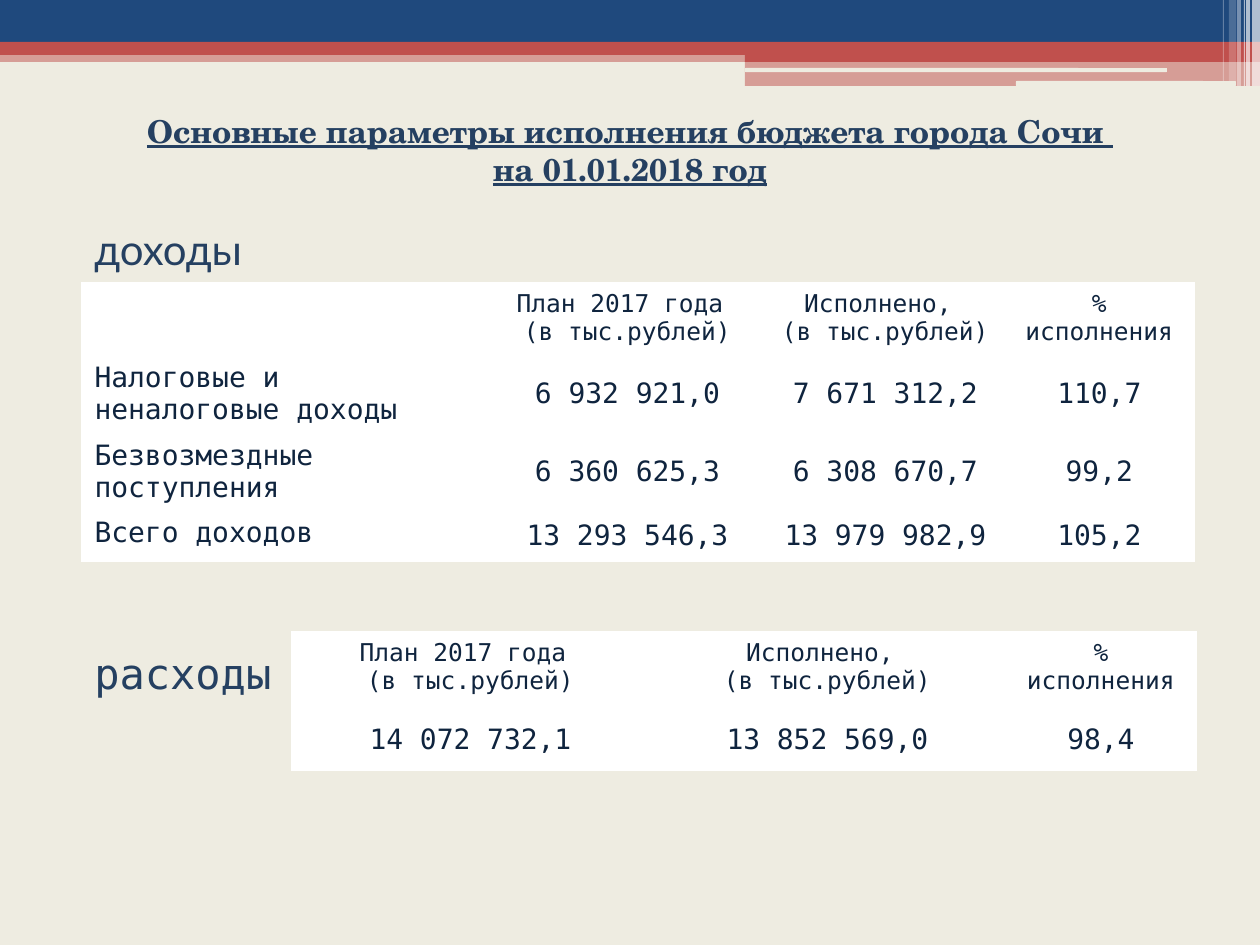
from pptx import Presentation
from pptx.dml.color import RGBColor
from pptx.enum.shapes import MSO_SHAPE as SHAPE
from pptx.enum.text import MSO_ANCHOR as ANCHOR, PP_ALIGN as ALIGN
from pptx.oxml.ns import qn
from pptx.util import Pt
from lxml.etree import SubElement

PX = 914400 / 126
MONO = "DejaVu Sans Mono"
NAVY, RED, CREAM, WHITE = "1F497D", "C0504D", "EEECE1", "FFFFFF"
HEADING, BODY = "254061", "0F243E"


def paint(fill, color, alpha=100):
    fill.solid()
    fill.fore_color.rgb = RGBColor.from_string(color)
    if alpha < 100:
        srgb = fill._xPr.find(qn("a:solidFill")).find(qn("a:srgbClr"))
        SubElement(srgb, qn("a:alpha"), val=str(alpha * 1000))


def write(frame, lines, size, font, color, align=ALIGN.LEFT, strong=False):
    frame.word_wrap = True
    for i, line in enumerate(lines):
        paragraph = frame.add_paragraph() if i else frame.paragraphs[0]
        paragraph.alignment = align
        run = paragraph.add_run()
        run.text = line
        run.font.size = Pt(size)
        run.font.name = font
        run.font.color.rgb = RGBColor.from_string(color)
        if strong:
            run.font.bold = run.font.underline = True


presentation = Presentation()
presentation.slide_width = round(1260 * PX)
presentation.slide_height = round(945 * PX)
slide = presentation.slides.add_slide(presentation.slide_layouts[6])
paint(slide.background.fill, CREAM)

bands = [
    (SHAPE.RECTANGLE, 0, 50, 1260, 12, RED, 50),
    (SHAPE.RECTANGLE, 0, 0, 1260, 42, NAVY, 100),
    (SHAPE.RECTANGLE, 0, 42, 1260, 13, RED, 100),
    (SHAPE.RECTANGLE, 745, 49, 515, 13, RED, 100),
    (SHAPE.RECTANGLE, 745, 61, 515, 25, RED, 50),
    (SHAPE.ROUNDED_RECTANGLE, 745, 68, 422, 4, CREAM, 100),
    (SHAPE.ROUNDED_RECTANGLE, 1016, 81, 220, 5, CREAM, 100),
]
stripes = [(1252, 8, 86, 65), (1246, 4, 86, 65), (1244, 1, 86, 60),
           (1237, 4, 86, 40), (1229, 7, 81, 20), (1223, 1, 81, 30)]
bands += [(SHAPE.RECTANGLE, left, 0, width, height, WHITE, alpha)
          for left, width, height, alpha in stripes]

for kind, left, top, width, height, color, alpha in bands:
    box = [round(n * PX) for n in (left, top, width, height)]
    shape = slide.shapes.add_shape(kind, *box)
    shape.shadow.inherit = False
    shape.line.fill.background()
    paint(shape.fill, color, alpha)

header = [["План 2017 года ", "(в тыс.рублей)"],
          ["Исполнено, ", "(в тыс.рублей)"], ["% исполнения"]]
income_rows = [
    [[]] + header,
    [["Налоговые и неналоговые доходы"], ["6 932 921,0"], ["7 671 312,2"], ["110,7"]],
    [["Безвозмездные поступления"], ["6 360 625,3"], ["6 308 670,7"], ["99,2"]],
    [["Всего доходов"], ["13 293 546,3"], ["13 979 982,9"], ["105,2"]],
]
expense_rows = [header, [["14 072 732,1"], ["13 852 569,0"], ["98,4"]]]
tables = [
    (82, 283, [407, 277, 239, 189], [72, 78, 77, 51], income_rows, True),
    (292, 632, [357, 357, 190], [78, 60], expense_rows, False),
]

for left, top, widths, heights, rows, has_labels in tables:
    box = [round(n * PX) for n in (left, top, sum(widths), sum(heights))]
    table = slide.shapes.add_table(len(rows), len(widths), *box).table
    for column, width in zip(table.columns, widths):
        column.width = round(width * PX)
    for r, (height, row) in enumerate(zip(heights, rows)):
        table.rows[r].height = round(height * PX)
        for c, lines in enumerate(row):
            cell = table.cell(r, c)
            paint(cell.fill, WHITE)
            is_label = has_labels and c == 0
            if r and not is_label:
                cell.vertical_anchor = ANCHOR.MIDDLE
            align = ALIGN.LEFT if is_label else ALIGN.CENTER
            write(cell.text_frame, lines, 16 if r else 14, MONO, BODY, align)

title = ["Основные параметры исполнения бюджета города Сочи ", "на 01.01.2018 год"]
captions = [
    (82, 217, 277, 63, ["доходы"], 24, "Lato", ALIGN.LEFT, False),
    (82, 641, 277, 63, ["расходы"], 24, MONO, ALIGN.LEFT, False),
    (30, 106, 1200, 89, title, 18, "TeX Gyre Schola", ALIGN.CENTER, True),
]
for left, top, width, height, lines, size, font, align, strong in captions:
    box = [round(n * PX) for n in (left, top, width, height)]
    textbox = slide.shapes.add_textbox(*box)
    write(textbox.text_frame, lines, size, font, HEADING, align, strong)

presentation.save("out.pptx")
